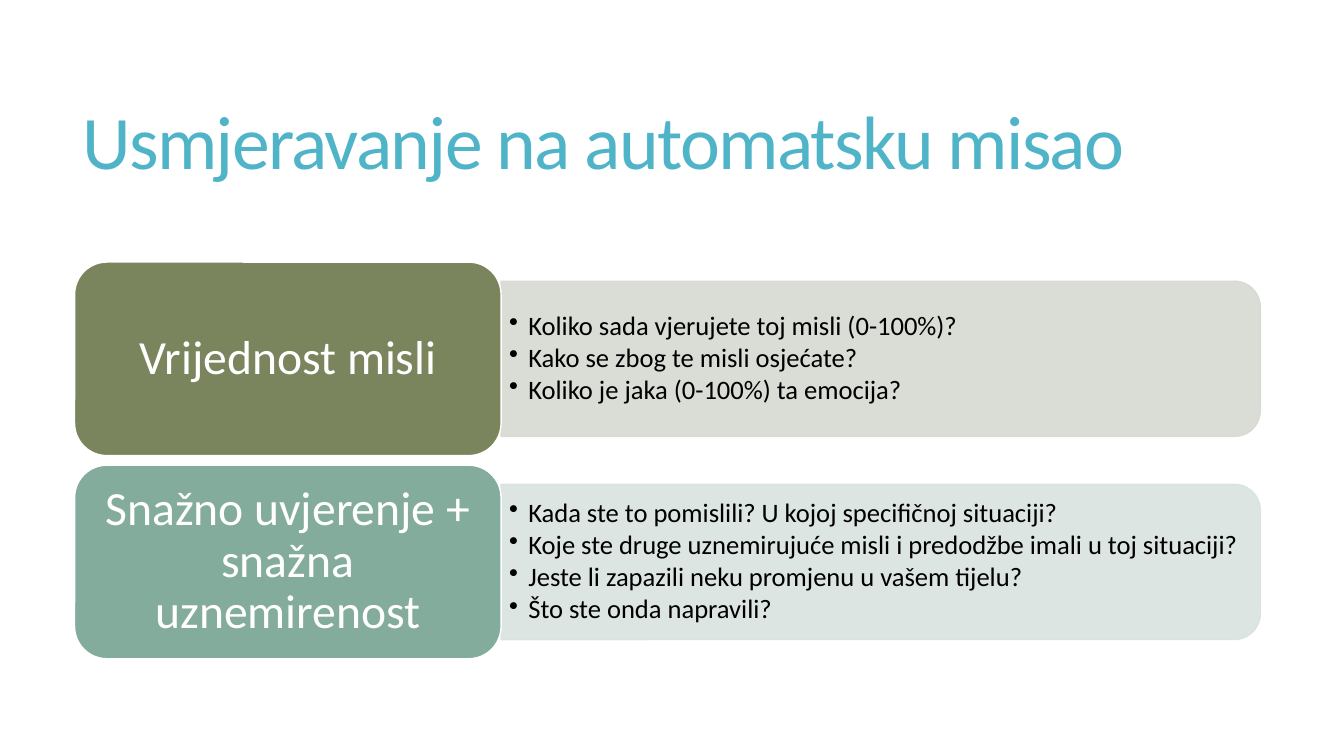
from dataclasses import dataclass

import lxml.etree
import pptx
import pptx.dml.color
import pptx.enum.shapes
import pptx.enum.text
import pptx.oxml.ns
import pptx.shapes.autoshape
import pptx.slide
import pptx.util

Inches = pptx.util.Inches
Pt = pptx.util.Pt
SHAPE = pptx.enum.shapes.MSO_SHAPE
ALIGN = pptx.enum.text.PP_ALIGN


@dataclass(frozen=True)
class Theme:
    font: str = "Calibri"
    title: str = "50B4C8"
    body: str = "000000"
    white: str = "FFFFFF"
    title_size: int = 54
    label_size: int = 34
    body_size: int = 19


@dataclass(frozen=True)
class Topic:
    label: str
    questions: tuple[str, ...]
    label_fill: str
    panel_fill: str


THEME = Theme()
TOPICS = (
    Topic(
        "Vrijednost misli",
        (
            "Koliko sada vjerujete toj misli (0-100%)?",
            "Kako se zbog te misli osjećate?",
            "Koliko je jaka (0-100%) ta emocija?",
        ),
        "7A855D",
        "D7D9D2",
    ),
    Topic(
        "Snažno uvjerenje + snažna uznemirenost",
        (
            "Kada ste to pomislili? U kojoj specifičnoj situaciji?",
            "Koje ste druge uznemirujuće misli i predodžbe imali u toj situaciji?",
            "Jeste li zapazili neku promjenu u vašem tijelu?",
            "Što ste onda napravili?",
        ),
        "84AC9D",
        "D9E3DF",
    ),
)

LABEL_LEFT, LABEL_TOP = 0.74, 2.6
LABEL_WIDTH, LABEL_HEIGHT = 4.23, 1.92
ROW_PITCH = 2.015
PANEL_LENGTH, PANEL_DEPTH = 7.53, 1.54
QUESTIONS_WIDTH, QUESTIONS_HEIGHT = 7.45, 1.39


def rgb(color: str) -> pptx.dml.color.RGBColor:
    return pptx.dml.color.RGBColor.from_string(color)


def add_bullet(p) -> None:
    """Give the paragraph a round bullet with a hanging indent."""
    pPr = p._p.get_or_add_pPr()
    pPr.set("marL", str(Inches(0.19)))
    pPr.set("indent", str(-Inches(0.19)))
    bullet = lxml.etree.SubElement(pPr, pptx.oxml.ns.qn("a:buChar"))
    bullet.set("char", "•")


def write_text(
    sp: pptx.shapes.autoshape.Shape,
    lines: tuple[str, ...],
    *,
    size: int,
    color: str,
    align: ALIGN = ALIGN.LEFT,
    line_spacing: float = 0.9,
    space_after: float = 0,
    insets: tuple[float, float] = (0.1, 0.05),
    tracking: float = 0,
    bullets: bool = False,
) -> None:
    """Fill the shape with one paragraph per line; insets are (side, top and bottom)."""
    tf = sp.text_frame
    tf.word_wrap = True
    tf.vertical_anchor = pptx.enum.text.MSO_ANCHOR.MIDDLE
    tf.margin_left = tf.margin_right = Inches(insets[0])
    tf.margin_top = tf.margin_bottom = Inches(insets[1])
    for i, line in enumerate(lines):
        p = tf.add_paragraph() if i else tf.paragraphs[0]
        p.alignment = align
        p.line_spacing = line_spacing
        p.space_after = Pt(space_after)
        if bullets:
            add_bullet(p)
        r = p.add_run()
        r.text = line
        r.font.name = THEME.font
        r.font.size = Pt(size)
        r.font.color.rgb = rgb(color)
        if tracking:
            r._r.get_or_add_rPr().set("spc", str(round(tracking * 100)))


def add_box(
    s: pptx.slide.Slide,
    kind: SHAPE,
    box: tuple[float, float, float, float],
    fill: str,
    line: str,
    opacity: int = 100,
) -> pptx.shapes.autoshape.Shape:
    sp = s.shapes.add_shape(kind, *map(Inches, box))
    sp.shadow.inherit = False
    sp.fill.solid()
    sp.fill.fore_color.rgb = rgb(fill)
    sp.line.color.rgb = rgb(line)
    sp.line.width = Pt(1)
    if opacity < 100:
        for color in sp._element.spPr.iter(pptx.oxml.ns.qn("a:srgbClr")):
            alpha = lxml.etree.SubElement(color, pptx.oxml.ns.qn("a:alpha"))
            alpha.set("val", str(opacity * 1000))
    return sp


def add_topic(s: pptx.slide.Slide, topic: Topic, top: float) -> None:
    """Draw the question panel, its questions and the label to their left."""
    middle = top + LABEL_HEIGHT / 2
    panel_left = LABEL_LEFT + LABEL_WIDTH

    # The panel is upright before its quarter turn about the centre.
    panel = add_box(
        s,
        SHAPE.ROUND_2_SAME_RECTANGLE,
        (
            panel_left + (PANEL_LENGTH - PANEL_DEPTH) / 2,
            middle - PANEL_LENGTH / 2,
            PANEL_DEPTH,
            PANEL_LENGTH,
        ),
        topic.panel_fill,
        topic.panel_fill,
        opacity=90,
    )
    panel.rotation = 90

    questions = s.shapes.add_textbox(
        Inches(panel_left),
        Inches(middle - QUESTIONS_HEIGHT / 2),
        Inches(QUESTIONS_WIDTH),
        Inches(QUESTIONS_HEIGHT),
    )
    write_text(
        questions, topic.questions, size=THEME.body_size, color=THEME.body,
        space_after=2.5, insets=(0.08, 0.04), bullets=True,
    )

    label = add_box(
        s,
        SHAPE.ROUNDED_RECTANGLE,
        (LABEL_LEFT, top, LABEL_WIDTH, LABEL_HEIGHT),
        topic.label_fill,
        THEME.white,
    )
    write_text(
        label, (topic.label,), size=THEME.label_size, color=THEME.white,
        align=ALIGN.CENTER, insets=(0.14, 0.07),
    )


def main() -> None:
    prs = pptx.Presentation()
    prs.slide_width, prs.slide_height = Inches(13.33), Inches(7.5)
    s = prs.slides.add_slide(prs.slide_layouts[6])

    title = s.shapes.add_textbox(Inches(0.72), Inches(0.55), Inches(11.78), Inches(1.81))
    write_text(
        title, ("Usmjeravanje na automatsku misao",), size=THEME.title_size,
        color=THEME.title, line_spacing=0.85, tracking=-1.2,
    )
    for i, topic in enumerate(TOPICS):
        add_topic(s, topic, LABEL_TOP + i * ROW_PITCH)
    prs.save("out.pptx")


if __name__ == "__main__":
    main()
